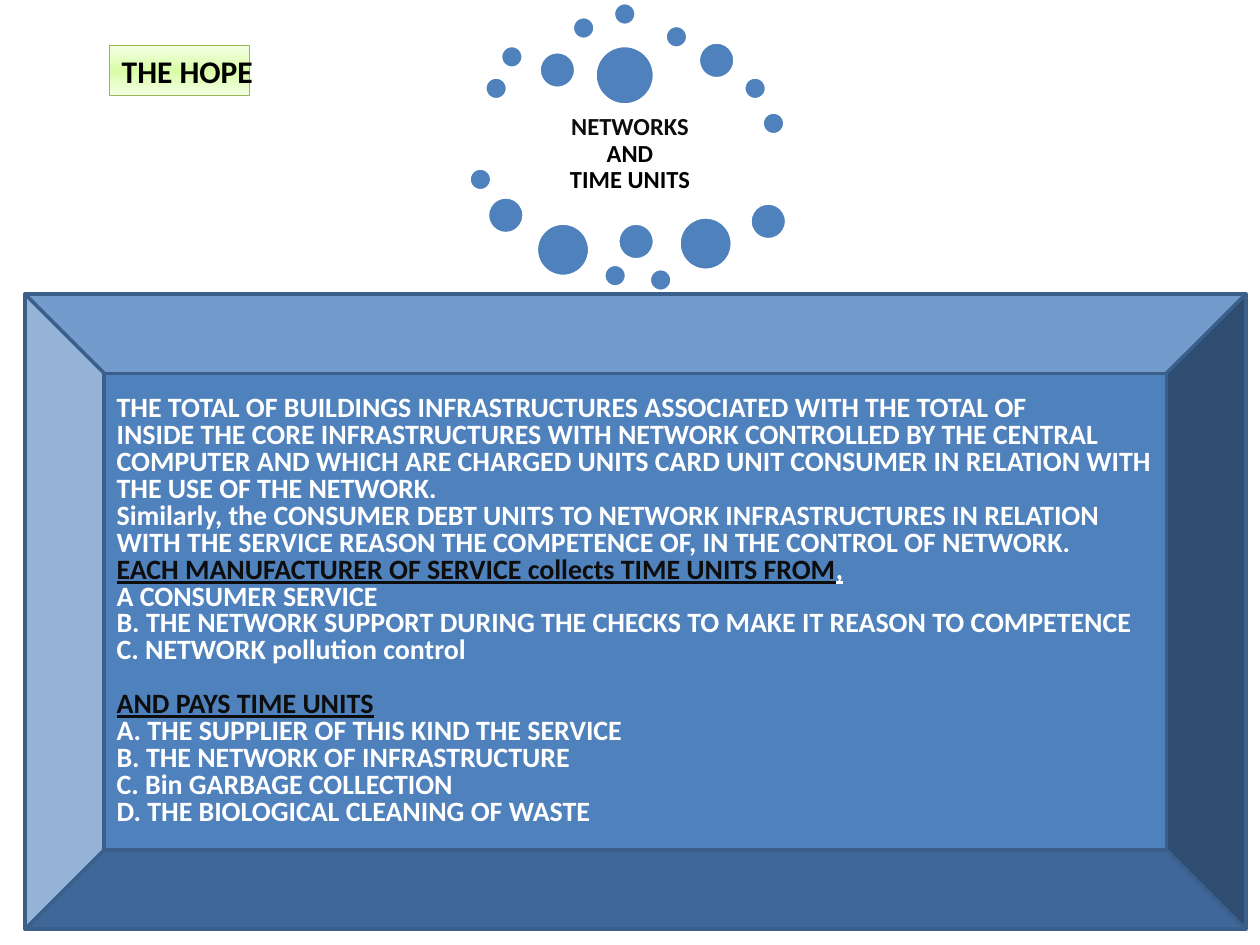
import copy
import pptx
import pptx.util
import pptx.dml.color
import pptx.enum.shapes
import pptx.enum.text

Pt = pptx.util.Pt
Kind = pptx.enum.shapes.MSO_SHAPE
Anchor = pptx.enum.text.MSO_ANCHOR
Align = pptx.enum.text.PP_ALIGN
hues = {"blue": "4F81BD", "edge": "3A5F8B", "white": "FFFFFF", "ink": "0D0D0D",
        "black": "000000", "pale": "F4FFE6", "lime": "D9FDA6", "green": "98B855"}


def tint(name):
    return pptx.dml.color.RGBColor.from_string(hues[name])


def write(shape, rows, size, frame, para):
    text = shape.text_frame
    for key, value in frame.items():
        setattr(text, key, value)
    for num, row in enumerate(rows):
        line = text.paragraphs[0] if num == 0 else text.add_paragraph()
        for key, value in para.items():
            setattr(line, key, value)
        for words, hue, under in row:
            run = line.add_run()
            run.text = words
            look = {"name": "Calibri", "size": Pt(size), "bold": True, "underline": under}
            for key, value in look.items():
                setattr(run.font, key, value)
            run.font.color.rgb = tint(hue)


deck = pptx.Presentation()
deck.slide_width, deck.slide_height = Pt(720), Pt(540)
slide = deck.slides.add_slide(deck.slide_layouts[6])
shapes = slide.shapes

title = shapes.add_textbox(Pt(263.5), Pt(60.5), Pt(193), Pt(55.5))
frame = {"word_wrap": True, "vertical_anchor": Anchor.MIDDLE}
frame.update({"margin_" + side: Pt(1.4) for side in ("left", "top", "right", "bottom")})
rows = [[("NETWORKS", "ink", False)], [("AND", "black", False)],
        [("TIME UNITS", "black", False)]]
write(title, rows, 14, frame, {"alignment": Align.CENTER, "line_spacing": 0.9})

dots = [(277, 44, 13), (286, 26, 13), (308, 29.5, 21), (327, 9.5, 13), (350.5, 1.5, 13),
        (380, 14.5, 13), (399, 24, 21), (425, 44, 13), (435.5, 64, 13), (340, 26, 34),
        (268, 96, 13), (278.5, 112.5, 21), (306.5, 127.5, 30.5), (345, 151, 13),
        (353, 127.5, 21), (371, 153.5, 13), (388, 124, 30.5), (428.5, 116, 21)]
for left, top, size in dots:
    dot = shapes.add_shape(Kind.OVAL, Pt(left), Pt(top), Pt(size), Pt(size))
    dot.shadow.inherit = False
    dot.fill.solid()
    dot.fill.fore_color.rgb = tint("blue")
    dot.line.color.rgb = tint("white")
    dot.line.width = Pt(2)

panel = shapes.add_shape(Kind.BEVEL, Pt(14.2), Pt(168), Pt(697.7), Pt(363))
panel.adjustments[0] = 0.125
panel.shadow.inherit = False
panel.fill.solid()
panel.fill.fore_color.rgb = tint("blue")
panel.line.color.rgb = tint("edge")
panel.line.width = Pt(2)
lines = [
    "THE TOTAL OF BUILDINGS INFRASTRUCTURES ASSOCIATED WITH THE TOTAL OF",
    "INSIDE THE CORE INFRASTRUCTURES WITH NETWORK CONTROLLED BY THE CENTRAL COMPUTER "
    "AND WHICH ARE CHARGED UNITS CARD UNIT CONSUMER IN RELATION WITH THE USE OF THE NETWORK.",
    "Similarly, the CONSUMER DEBT UNITS TO NETWORK INFRASTRUCTURES IN RELATION "
    "WITH THE SERVICE REASON THE COMPETENCE OF, IN THE CONTROL OF NETWORK.",
    "EACH MANUFACTURER OF SERVICE collects TIME UNITS FROM",
    "A CONSUMER SERVICE",
    "B. THE NETWORK SUPPORT DURING THE CHECKS TO MAKE IT REASON TO COMPETENCE",
    "C. NETWORK pollution control",
    "AND PAYS TIME UNITS",
    "A. THE SUPPLIER OF THIS KIND THE SERVICE",
    "B. THE NETWORK OF INFRASTRUCTURE",
    "C. Bin GARBAGE COLLECTION",
    "D. THE BIOLOGICAL CLEANING OF WASTE",
]
heads = (3, 7)
rows = [[(words, "ink" if num in heads else "white", num in heads)]
        for num, words in enumerate(lines)]
rows[3].append((",", "white", True))
write(panel, rows, 16, {"word_wrap": True, "vertical_anchor": Anchor.MIDDLE},
      {"alignment": Align.LEFT, "line_spacing": 0.8})
panel.text_frame.paragraphs[7].space_before = Pt(15.5)

label = shapes.add_shape(Kind.RECTANGLE, Pt(62.5), Pt(26), Pt(80), Pt(28.8))
label.shadow.inherit = False
label.fill.gradient()
label.fill.gradient_angle = 90
stops = label.fill.gradient_stops
first = stops[0].color
first.rgb = tint("pale")
stops[1].color.rgb = tint("lime")
stops[0].position, stops[1].position = 0, 0.5
grad = label.fill._fill._gradFill.gsLst
last = copy.deepcopy(grad[0])
last.set("pos", "100000")
grad.append(last)
label.line.color.rgb = tint("green")
label.line.width = Pt(0.75)
write(label, [[("THE HOPE", "black", False)]], 18,
      {"word_wrap": False, "vertical_anchor": Anchor.TOP}, {"alignment": Align.LEFT})

deck.save("out.pptx")
